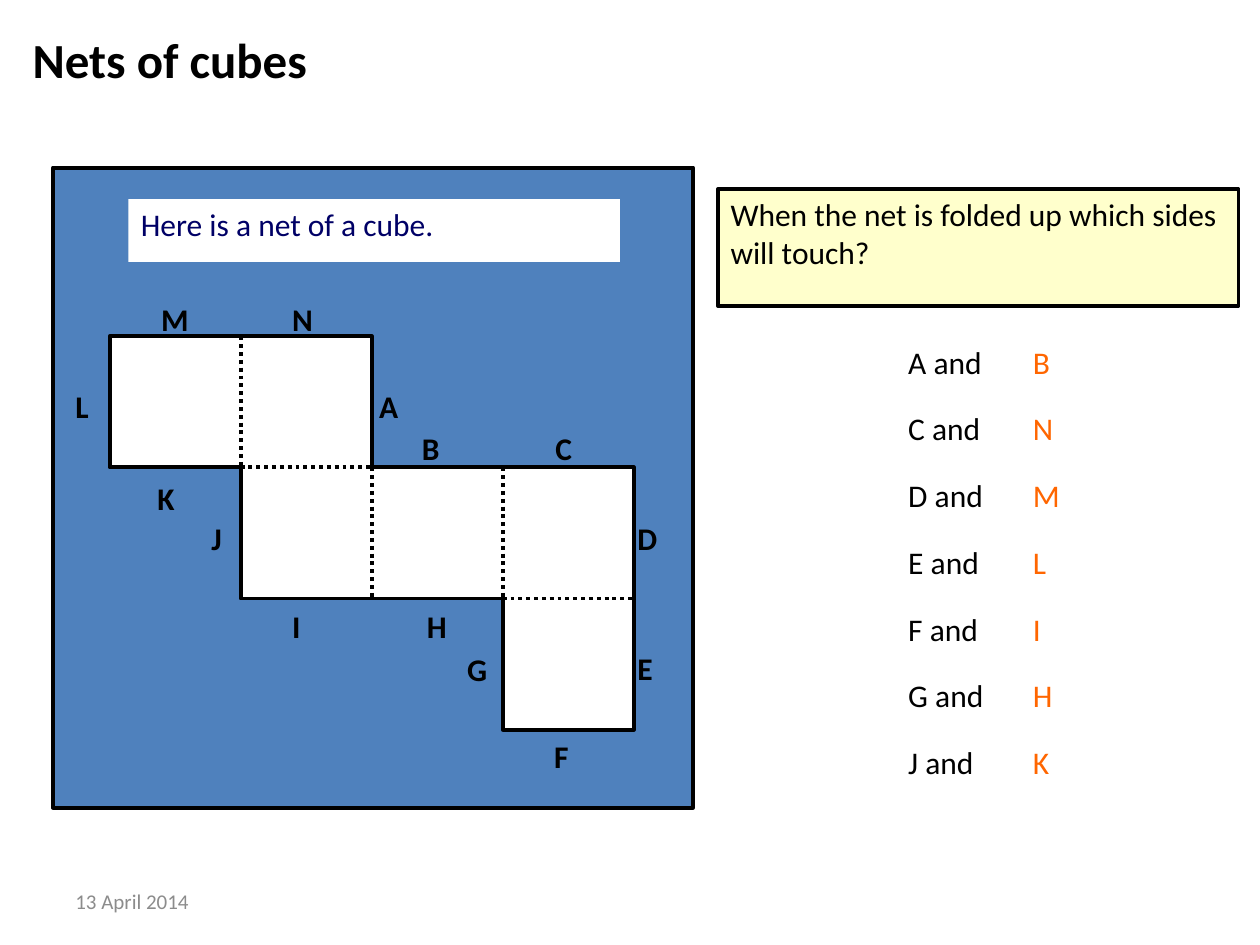
from lxml.etree import SubElement
from pptx import Presentation
from pptx.dml.color import RGBColor
from pptx.enum.dml import MSO_LINE
from pptx.enum.shapes import MSO_CONNECTOR, MSO_SHAPE
from pptx.enum.text import MSO_ANCHOR, PP_ALIGN
from pptx.oxml.ns import qn
from pptx.util import Inches, Pt

# Content
TITLE = "Nets of cubes"
INTRO = "Here is a net of a cube."
QUESTION = "When the net is folded up which sides will touch?"
DATE = "13 April 2014"
PAIRS = [("A", "B"), ("C", "N"), ("D", "M"), ("E", "L"),
         ("F", "I"), ("G", "H"), ("J", "K")]
SIDE_LABELS = {  # left and top of each letter's box
    "M": (1.18, 2.33), "N": (2.22, 2.33), "A": (2.91, 3.02),
    "B": (3.25, 3.36), "C": (4.31, 3.36), "D": (4.96, 4.07),
    "E": (4.96, 5.1), "F": (4.3, 5.8), "G": (3.61, 5.11),
    "H": (3.29, 4.77), "I": (2.22, 4.77), "J": (1.58, 4.07),
    "K": (1.15, 3.75), "L": (0.5, 3.02),
}

# The net, in squares from its top left corner
NET_LEFT, NET_TOP, SQUARE = 0.87, 2.67, 1.04
OUTLINE = [(0, 0), (2, 0), (2, 1), (4, 1), (4, 3),
           (3, 3), (3, 2), (1, 2), (1, 1), (0, 1)]
FOLDS = [((1, 0), (1, 1)), ((2, 1), (2, 2)), ((3, 1), (3, 2)),
         ((1, 1), (2, 1)), ((3, 2), (4, 2))]

BLACK, WHITE, BLUE, YELLOW = "000000", "FFFFFF", "4F81BD", "FFFFCC"
NAVY, ORANGE, GREY = "000066", "FF6600", "8C8C8C"


def color(code):
    return RGBColor.from_string(code)


def write(box, text, size=18, ink=BLACK, bold=False, anchor=MSO_ANCHOR.TOP):
    frame = box.text_frame
    frame.word_wrap = True
    frame.vertical_anchor = anchor
    para = frame.paragraphs[0]
    para.alignment = PP_ALIGN.LEFT
    span = para.add_run()
    span.text = text
    font = span.font
    font.name, font.size, font.bold = "Calibri", Pt(size), bold
    font.color.rgb = color(ink)


def add_text(page, text, place, **style):
    box = page.shapes.add_textbox(*map(Inches, place))
    write(box, text, **style)


def paint(shape, fill, line=None):
    shape.shadow.inherit = False
    shape.fill.solid()
    shape.fill.fore_color.rgb = color(fill)
    if line:
        shape.line.color.rgb = color(line)
        shape.line.width = Pt(2.25)
    else:
        shape.line.fill.background()


def add_panel(page, place, fill, line=None):
    panel = page.shapes.add_shape(MSO_SHAPE.RECTANGLE, *map(Inches, place))
    paint(panel, fill, line)
    return panel


def corner(column, row):
    return Inches(NET_LEFT + column * SQUARE), Inches(NET_TOP + row * SQUARE)


def add_net(page):
    corners = [corner(*point) for point in OUTLINE]
    builder = page.shapes.build_freeform(*corners[0])
    builder.add_line_segments(corners[1:], close=True)
    paint(builder.convert_to_shape(), WHITE, BLACK)
    for start, end in FOLDS:
        fold = page.shapes.add_connector(
            MSO_CONNECTOR.STRAIGHT, *corner(*start), *corner(*end))
        fold.line.color.rgb = color(BLACK)
        fold.line.width = Pt(2.25)
        fold.line.dash_style = MSO_LINE.ROUND_DOT
        SubElement(fold._element.spPr, qn("a:effectLst"))


def main():
    deck = Presentation()
    deck.slide_width, deck.slide_height = Inches(10), Inches(7.5)
    page = deck.slides.add_slide(deck.slide_layouts[5])

    # Title
    title = page.shapes.title
    title.left, title.top, title.width, title.height = map(
        Inches, (0.16, 0.16, 9, 0.61))
    write(title, TITLE, size=28, bold=True, anchor=MSO_ANCHOR.MIDDLE)

    # Question and answers
    question = add_panel(page, (5.7, 1.5, 4.13, 0.93), YELLOW, BLACK)
    write(question, QUESTION)
    for index, (side, match) in enumerate(PAIRS):
        top = 2.67 + index * 0.53
        add_text(page, f"{side} and", (7.11, top, 1.08, 0.5))
        add_text(page, match, (8.1, top, 0.43, 0.5), ink=ORANGE)

    # Net on its blue panel
    add_panel(page, (0.42, 1.33, 5.08, 5.08), BLUE, BLACK)
    intro = add_panel(page, (1.02, 1.58, 3.9, 0.5), WHITE)
    write(intro, INTRO, ink=NAVY)
    for letter, (left, top) in SIDE_LABELS.items():
        add_text(page, letter, (left, top, 0.38, 0.4), bold=True)
    add_net(page)

    # Date
    add_text(page, DATE, (0.5, 6.95, 2.33, 0.4), size=12, ink=GREY,
             anchor=MSO_ANCHOR.MIDDLE)
    deck.save("out.pptx")


if __name__ == "__main__":
    main()
